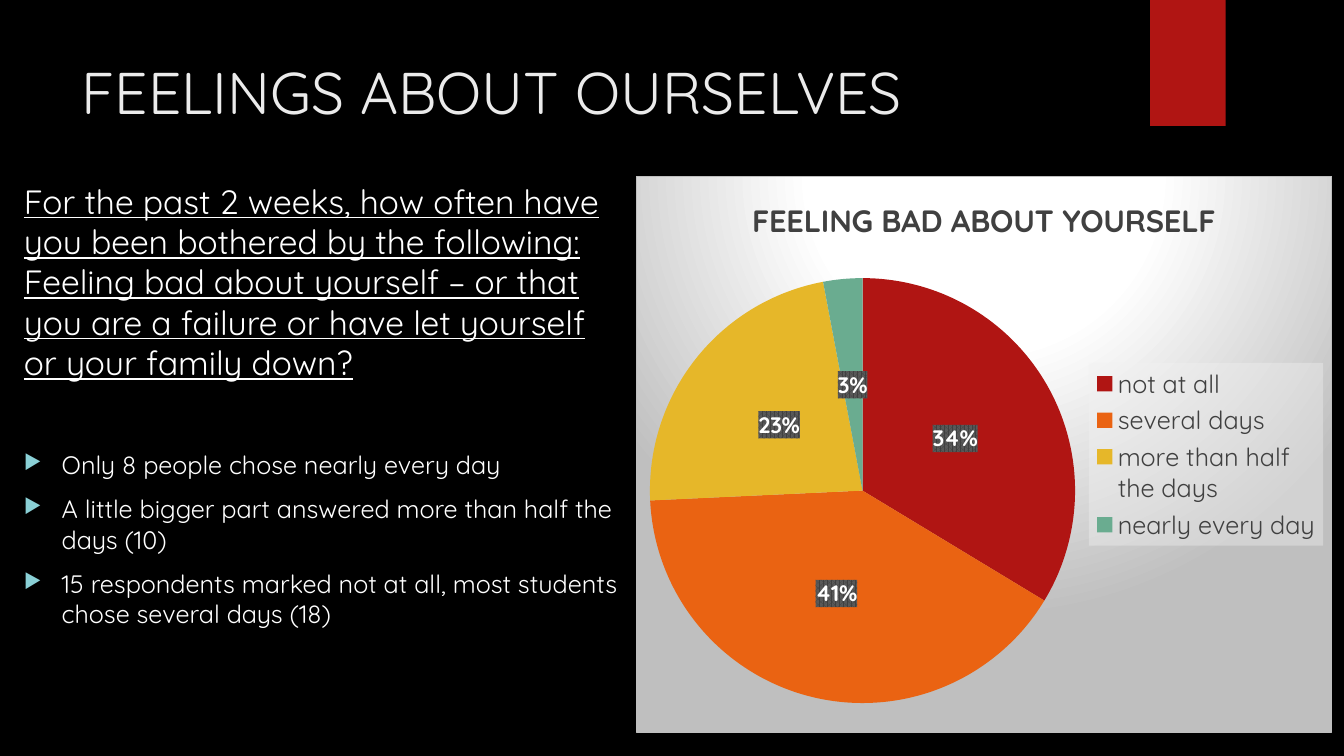
from lxml import etree
from pptx import Presentation
from pptx.chart.data import CategoryChartData
from pptx.dml.color import RGBColor
from pptx.enum.chart import XL_CHART_TYPE as ChartType, XL_LABEL_POSITION as LabelPos
from pptx.enum.chart import XL_LEGEND_POSITION as LegendPos
from pptx.enum.shapes import MSO_SHAPE as Shape
from pptx.enum.text import MSO_ANCHOR as Anchor, PP_ALIGN as Align
from pptx.oxml import parse_xml
from pptx.oxml.ns import nsdecls, qn
from pptx.util import Pt

# Content
TITLE = "FEELINGS ABOUT OURSELVES"
QUESTION = (
    "For the past 2 weeks, how often have you been bothered by the following: "
    "Feeling bad about yourself – or that you are a failure or have let yourself "
    "or your family down?"
)
FINDINGS = [
    "Only 8 people chose nearly every day",
    "A little bigger part answered more than half the days (10)",
    "15 respondents marked not at all, most students chose several days (18)",
]
CHART_TITLE = "FEELING BAD ABOUT YOURSELF"

FONT = "Quicksand"
BLACK = RGBColor(0x00, 0x00, 0x00)
WHITE = RGBColor(0xFF, 0xFF, 0xFF)
TITLE_GREY = RGBColor(0xEB, 0xEB, 0xEB)
CHART_GREY = RGBColor(0x40, 0x40, 0x40)
LABEL_GREY = RGBColor(0x59, 0x59, 0x59)
LEGEND_GREY = RGBColor(0xF2, 0xF2, 0xF2)
SILVER = RGBColor(0xBF, 0xBF, 0xBF)
BULLET_BLUE = RGBColor(0x8A, 0xD0, 0xD6)
RED = RGBColor(0xB0, 0x15, 0x13)
ORANGE = RGBColor(0xEA, 0x63, 0x12)
YELLOW = RGBColor(0xE6, 0xB7, 0x29)
GREEN = RGBColor(0x6A, 0xAC, 0x90)

ANSWERS = [
    ("not at all", 34, RED),
    ("several days", 41, ORANGE),
    ("more than half the days", 23, YELLOW),
    ("nearly every day", 3, GREEN),
]

# Layout in points
SLIDE_W, SLIDE_H = 960, 540
CONTENT_TOP, CONTENT_H = 125.5, 398
TEXT_LEFT, TEXT_W = 10, 444
CHART_LEFT, CHART_W = TEXT_LEFT + TEXT_W, 497.5
INDENT = 27


def style(font, size, color, bold=False):
    font.name = FONT
    font.size = Pt(size)
    font.bold = bold
    font.color.rgb = color


def chart_fill(fill, line=""):
    return parse_xml(f"<c:spPr {nsdecls('c', 'a')}>{fill}{line}</c:spPr>")


def add_bullet(paragraph):
    props = paragraph._p.get_or_add_pPr()
    props.set("marL", str(Pt(INDENT)))
    props.set("indent", str(-Pt(INDENT)))
    color = etree.SubElement(props, qn("a:buClr"))
    etree.SubElement(color, qn("a:srgbClr")).set("val", str(BULLET_BLUE))
    etree.SubElement(props, qn("a:buSzPct")).set("val", "80000")
    etree.SubElement(props, qn("a:buChar")).set("char", "▶")


prs = Presentation()
prs.slide_width, prs.slide_height = Pt(SLIDE_W), Pt(SLIDE_H)
slide = prs.slides.add_slide(prs.slide_layouts[5])
slide.background.fill.solid()
slide.background.fill.fore_color.rgb = BLACK

# Red tab at the top edge
tab = slide.shapes.add_shape(Shape.RECTANGLE, Pt(821.5), Pt(0), Pt(54), Pt(90))
tab.shadow.inherit = False
tab.fill.solid()
tab.fill.fore_color.rgb = RED
tab.line.fill.background()

# Title
title = slide.shapes.title
title.left, title.top, title.width, title.height = Pt(51), Pt(36), Pt(741), Pt(110)
title.text_frame.text = TITLE
title.text_frame.vertical_anchor = Anchor.TOP
heading = title.text_frame.paragraphs[0]
heading.alignment = Align.LEFT
style(heading.runs[0].font, 42, TITLE_GREY)

# Question and findings
survey = slide.shapes.add_textbox(
    Pt(TEXT_LEFT), Pt(CONTENT_TOP), Pt(TEXT_W), Pt(CONTENT_H)).text_frame
survey.word_wrap = True
survey.text = QUESTION
question = survey.paragraphs[0].runs[0]
style(question.font, 24, WHITE)
question.font.underline = True
for number, finding in enumerate(FINDINGS):
    paragraph = survey.add_paragraph()
    paragraph.text = finding
    paragraph.space_before = Pt(10 if number else 48)
    add_bullet(paragraph)
    style(paragraph.runs[0].font, 18, WHITE)

# Pie chart
pie_data = CategoryChartData()
pie_data.categories = [answer for answer, _, _ in ANSWERS]
pie_data.add_series(CHART_TITLE, [share for _, share, _ in ANSWERS])
chart = slide.shapes.add_chart(
    ChartType.PIE, Pt(CHART_LEFT), Pt(CONTENT_TOP), Pt(CHART_W), Pt(CONTENT_H), pie_data).chart
style(chart.font, 10, WHITE)
chart.has_title = True
chart.chart_title.text_frame.text = CHART_TITLE
style(chart.chart_title.text_frame.paragraphs[0].runs[0].font, 22, CHART_GREY, bold=True)

plot = chart.plots[0]
plot.vary_by_categories = True
for index, (_, _, color) in enumerate(ANSWERS):
    wedge = plot.series[0].points[index].format
    wedge.fill.solid()
    wedge.fill.fore_color.rgb = color
    wedge.line.fill.background()

# Percent labels on a dark pattern
plot.has_data_labels = True
labels = plot.data_labels
labels.show_percentage, labels.show_value = True, False
labels.number_format, labels.number_format_is_linked = "0%", False
labels.position = LabelPos.CENTER
style(labels.font, 16, WHITE, bold=True)
labels._element.find(qn("c:txPr")).addprevious(chart_fill(
    f'<a:pattFill prst="pct75"><a:fgClr><a:srgbClr val="{CHART_GREY}"/></a:fgClr>'
    f'<a:bgClr><a:srgbClr val="{LABEL_GREY}"/></a:bgClr></a:pattFill>'))

# Legend on a translucent panel
chart.has_legend = True
legend = chart.legend
legend.position = LegendPos.RIGHT
legend.include_in_layout = False
style(legend.font, 18, CHART_GREY)
legend._element.find(qn("c:txPr")).addprevious(chart_fill(
    f'<a:solidFill><a:srgbClr val="{LEGEND_GREY}"><a:alpha val="39000"/>'
    "</a:srgbClr></a:solidFill>"))

# Chart background
stops = "".join(
    f'<a:gs pos="{place * 1000}"><a:srgbClr val="{color}"/></a:gs>'
    for place, color in [(0, WHITE), (39, WHITE), (100, SILVER)])
chart._chartSpace.find(qn("c:chart")).addnext(chart_fill(
    f'<a:gradFill><a:gsLst>{stops}</a:gsLst><a:path path="circle">'
    '<a:fillToRect l="50000" t="-80000" r="50000" b="180000"/></a:path></a:gradFill>',
    f'<a:ln w="{Pt(0.75)}"><a:solidFill><a:srgbClr val="{SILVER}"/></a:solidFill></a:ln>'))

prs.save("out.pptx")
